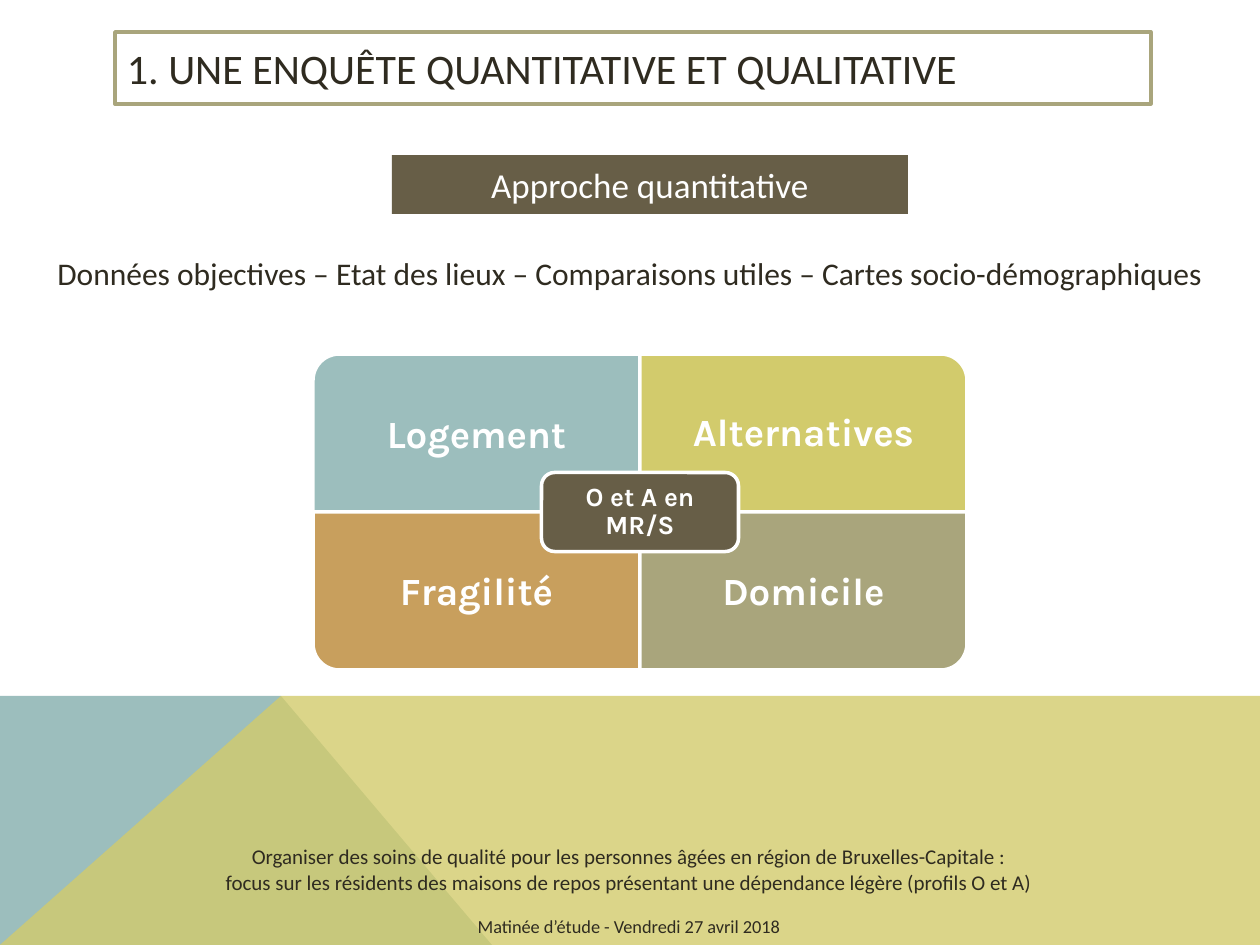
from lxml import etree
from pptx import Presentation
from pptx.dml.color import RGBColor
from pptx.enum.shapes import MSO_SHAPE as SHAPE
from pptx.enum.text import MSO_ANCHOR as ANCHOR, PP_ALIGN as ALIGN
from pptx.oxml.ns import qn
from pptx.util import Emu, Pt

PX = 914400 / 126
W, H = 1260, 945
DARK, WHITE, BROWN, TAUPE = "2F2B20", "FFFFFF", "675E47", "A9A57C"
TEAL, LIME, OCHRE = "9CBEBD", "D2CB6C", "C89F5D"

# Background: points, colour, opacity in percent
BANDS = [
    ([(0, H), (0, 696), (281, 696), (492, H)], TEAL, 100),
    ([(0, H), (281, 696), (W, 696), (W, H)], LIME, 80),
]
TITLE = "1. UNE ENQUÊTE QUANTITATIVE ET QUALITATIVE"
APPROACH = "Approche quantitative"
SUMMARY = ("Données objectives – Etat des lieux – Comparaisons utiles – "
           "Cartes socio-démographiques")
# Matrix: label, colour, column, row, rotation, vertical centre of the label
QUADRANTS = [
    ("Logement", TEAL, 0, 0, 270, 433),
    ("Alternatives", LIME, 1, 0, 0, 431),
    ("Fragilité", OCHRE, 0, 1, 180, 590),
    ("Domicile", TAUPE, 1, 1, 90, 590),
]
CENTRE_LABEL = "O et A en MR/S"
MATRIX_X, MATRIX_Y, QUAD_W, QUAD_H = 313, 354, 327, 158
# Footer: text, size, space before
FOOTER = [
    ("Organiser des soins de qualité pour les personnes âgées en région de "
     "Bruxelles-Capitale :", 12, 0),
    ("focus sur les résidents des maisons de repos présentant une dépendance "
     "légère (profils O et A)", 12, 0),
    ("Matinée d’étude - Vendredi 27 avril 2018", 10.5, 12),
]


def px(*values):
    return [Emu(round(v * PX)) for v in values]


def rgb(color):
    return RGBColor.from_string(color)


def style(sp, fill, line=None):
    sp.shadow.inherit = False
    sp.fill.solid()
    sp.fill.fore_color.rgb = rgb(fill)
    if line:
        sp.line.color.rgb = rgb(line)
        sp.line.width = Pt(2)
    else:
        sp.line.fill.background()
    return sp


def add_box(kind, x, y, w, h, fill, line=None):
    return style(slide.shapes.add_shape(kind, *px(x, y, w, h)), fill, line)


def add_text_box(x, y, w, h):
    return slide.shapes.add_textbox(*px(x, y, w, h))


def write(sp, lines, color, font="Calibri", bold=False, align=ALIGN.CENTER,
          anchor=ANCHOR.MIDDLE, spacing=1.0, inset=12):
    """Fill a shape with (text, size, space before) lines."""
    tf = sp.text_frame
    side, edge = px(inset, 6)
    frame = dict(word_wrap=True, vertical_anchor=anchor, margin_left=side,
                 margin_right=side, margin_top=edge, margin_bottom=edge)
    for name, value in frame.items():
        setattr(tf, name, value)
    for i, (text, size, before) in enumerate(lines):
        p = tf.add_paragraph() if i else tf.paragraphs[0]
        p.alignment, p.space_before, p.line_spacing = align, Pt(before), spacing
        r = p.add_run()
        r.text = text
        for name, value in dict(name=font, size=Pt(size), bold=bold).items():
            setattr(r.font, name, value)
        r.font.color.rgb = rgb(color)


def add_band(points, color, opacity):
    builder = slide.shapes.build_freeform(*points[0], scale=PX)
    builder.add_line_segments(points[1:], close=True)
    sp = style(builder.convert_to_shape(), color)
    if opacity < 100:
        clr = sp.fill._xPr.find(".//" + qn("a:srgbClr"))
        etree.SubElement(clr, qn("a:alpha"), val=str(opacity * 1000))


def add_quadrant(label, color, col, row, rotation, label_y):
    x, y = MATRIX_X + col * QUAD_W, MATRIX_Y + row * QUAD_H
    # A quarter turn swaps width and height about the same centre
    w, h = (QUAD_H, QUAD_W) if rotation % 180 else (QUAD_W, QUAD_H)
    sp = add_box(SHAPE.ROUND_1_RECTANGLE, x + (QUAD_W - w) / 2,
                 y + (QUAD_H - h) / 2, w, h, color, WHITE)
    sp.rotation = rotation
    write(add_text_box(x, label_y - 30, QUAD_W, 60), [(label, 22, 0)],
          WHITE, "Karla", True)


prs = Presentation()
prs.slide_width, prs.slide_height = px(W, H)
slide = prs.slides.add_slide(prs.slide_layouts[6])

for band in BANDS:
    add_band(*band)

write(add_box(SHAPE.RECTANGLE, 392, 155, 516, 59, BROWN),
      [(APPROACH, 20, 0)], WHITE)
write(add_box(SHAPE.RECTANGLE, 115, 32, 1036, 72, WHITE, TAUPE),
      [(TITLE, 24, 0)], DARK, align=ALIGN.LEFT)
write(add_text_box(0, 243, W, 59), [(SUMMARY, 18, 0)], DARK)

for quadrant in QUADRANTS:
    add_quadrant(*quadrant)
centre_w, centre_h = 197, 79
write(add_box(SHAPE.ROUNDED_RECTANGLE, MATRIX_X + QUAD_W - centre_w / 2,
              MATRIX_Y + QUAD_H - centre_h / 2, centre_w, centre_h, BROWN, WHITE),
      [(CENTRE_LABEL, 15, 0)], WHITE, "Karla", True, spacing=0.9)

write(add_text_box(-1, 838, W, 107), FOOTER, DARK, anchor=ANCHOR.TOP)

prs.save("out.pptx")
